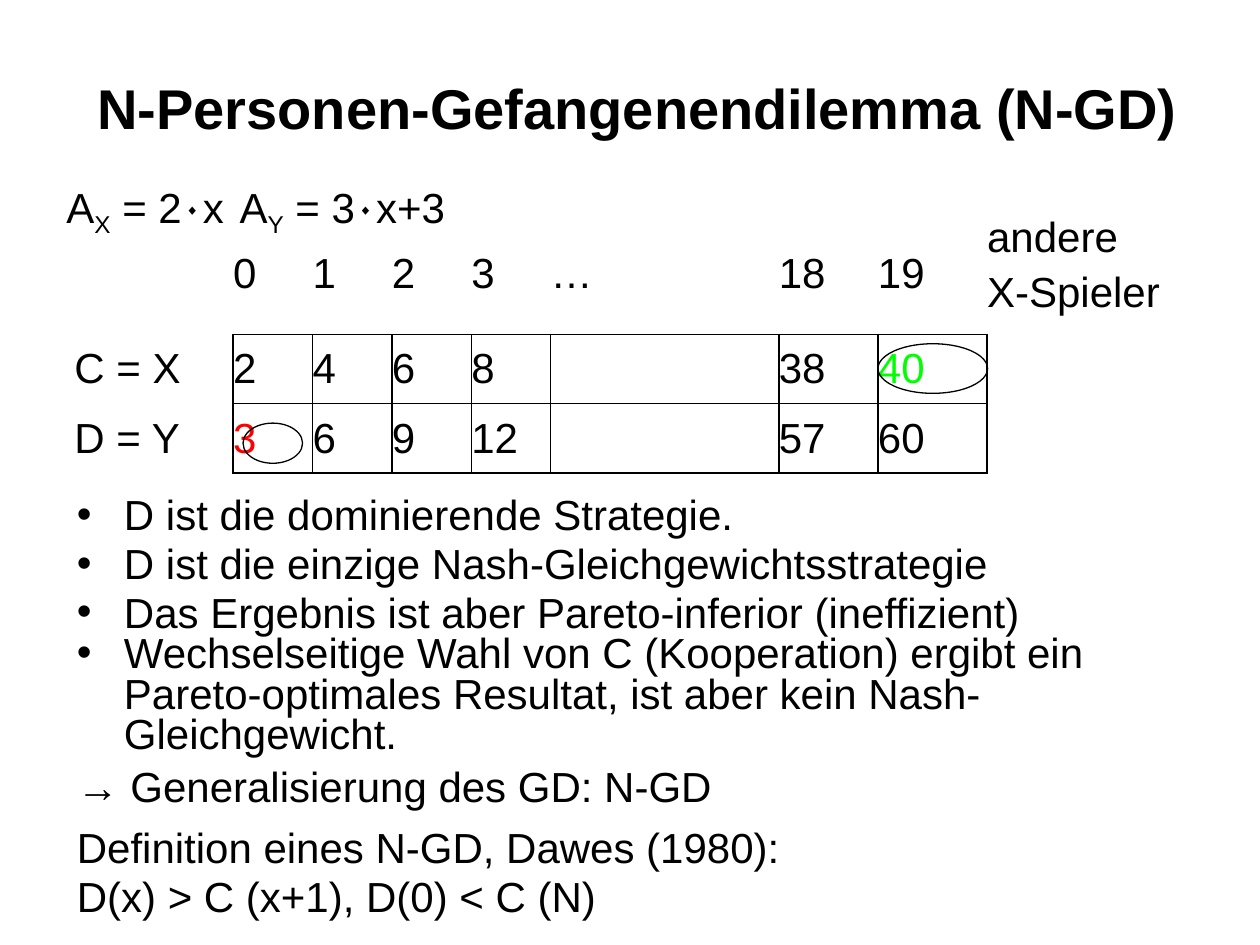
from lxml.etree import SubElement
from pptx import Presentation
from pptx.dml.color import RGBColor
from pptx.enum.shapes import MSO_SHAPE
from pptx.enum.text import MSO_ANCHOR, PP_ALIGN
from pptx.oxml.ns import qn
from pptx.util import Cm, Pt

COLORS = {"ink": "000000", "best": "00FF00", "equilibrium": "FF0000"}
FONT = "Arial"
SIZE = 24
INDENT = 0.95
BEFORE, AFTER = 4.8, 7.2  # 20 % and 30 % of the text size


class SlideBuilder:
    def __init__(self, deck):
        self.page = deck.slides.add_slide(deck.slide_layouts[5])

    def span(self, para, text, color="ink", size=SIZE, bold=False, baseline=None):
        span = para.add_run()
        span.text = text
        span.font.name = FONT
        span.font.size = Pt(size)
        span.font.bold = bold
        span.font.color.rgb = RGBColor.from_string(COLORS[color])
        if baseline:
            span.font._element.set("baseline", str(baseline * 1000))

    def hang(self, para, bullet=None):
        props = para._p.get_or_add_pPr()
        props.set("marL", str(Cm(INDENT)))
        props.set("indent", str(-Cm(INDENT)))
        if bullet:
            SubElement(props, qn("a:buFont"), typeface=FONT)
            SubElement(props, qn("a:buChar"), char=bullet)
        else:
            SubElement(props, qn("a:buNone"))

    def title(self, text, left, top, width, height):
        title = self.page.shapes.title
        title.left, title.top, title.width, title.height = map(
            Cm, (left, top, width, height))
        frame = title.text_frame
        frame.vertical_anchor = MSO_ANCHOR.MIDDLE
        para = frame.paragraphs[0]
        para.alignment = PP_ALIGN.CENTER
        self.span(para, text, size=32, bold=True)
        self.span(para, " ", size=48)

    def text_box(self, left, top, width, height):
        box = self.page.shapes.add_textbox(*map(Cm, (left, top, width, height)))
        box.text_frame.word_wrap = True
        return box.text_frame

    def formulas(self, parts, *place):
        para = self.text_box(*place).paragraphs[0]
        para.space_before = Pt(BEFORE)
        self.hang(para)
        for text, baseline in parts:
            self.span(para, text, baseline=baseline)

    def statements(self, items, *place):
        frame = self.text_box(*place)
        for index, (text, bullet, before, after) in enumerate(items):
            para = frame.add_paragraph() if index else frame.paragraphs[0]
            para.line_spacing = 0.8
            para.space_before, para.space_after = Pt(before), Pt(after)
            self.hang(para, bullet)
            self.span(para, text)

    def borders(self, cell, sides):
        props = cell._tc.get_or_add_tcPr()
        for side in "LRTB":
            line = SubElement(props, qn(f"a:ln{side}"), w=str(Pt(1)))
            if side in sides:
                fill = SubElement(line, qn("a:solidFill"))
                SubElement(fill, qn("a:srgbClr"), val=COLORS["ink"])
            else:
                SubElement(line, qn("a:noFill"))
        cell.fill.background()

    def payoff_table(self, rows, widths, heights, accents, left, top):
        frame = self.page.shapes.add_table(
            len(rows), len(widths), Cm(left), Cm(top),
            Cm(sum(widths)), Cm(sum(heights)))
        table = frame.table
        table.first_row = table.horz_banding = False
        for column, width in zip(table.columns, widths):
            column.width = Cm(width)
        for row, height in zip(table.rows, heights):
            row.height = Cm(height)
        last = len(widths) - 1
        for r, row in enumerate(rows):
            for c, text in enumerate(row):
                cell = table.cell(r, c)
                cell.margin_left = cell.margin_right = 0
                cell.margin_top = cell.margin_bottom = 0
                # Only the payoffs are framed; outer cells share their edges
                if 0 < c < last:
                    self.borders(cell, "LRTB" if r else "B")
                else:
                    self.borders(cell, "" if r == 0 else "L" if c else "R")
                if not (r == 0 and c == last):
                    cell.vertical_anchor = MSO_ANCHOR.MIDDLE
                for index, line in enumerate(text.split("\n") if text else []):
                    body = cell.text_frame
                    para = body.add_paragraph() if index else body.paragraphs[0]
                    para.space_before = Pt(BEFORE)
                    self.span(para, line, accents.get((r, c), "ink"))

    def ring(self, left, top, width, height):
        ring = self.page.shapes.add_shape(
            MSO_SHAPE.OVAL, *map(Cm, (left, top, width, height)))
        ring.shadow.inherit = False
        ring.fill.background()
        ring.line.color.rgb = RGBColor.from_string(COLORS["ink"])
        ring.line.width = Pt(0.75)


def main():
    deck = Presentation()
    deck.slide_width, deck.slide_height = Cm(25.4), Cm(19.05)
    slide = SlideBuilder(deck)

    # Title and payoff formulas
    slide.title(" N-Personen-Gefangenendilemma (N-GD)", 1.27, 0.76, 22.86, 2.36)
    slide.formulas(
        [("A", None), ("X", -25), (" = 2۰x\tA", None), ("Y", -25),
         (" = 3۰x+3", None)],
        1.09, 3.53, 11.23, 1.47)

    # Payoffs by number of other X players
    slide.payoff_table(
        [["", "0", "1", "2", "3", "…", "18", "19", "andere\nX-Spieler"],
         ["C = X", "2", "4", "6", "8", "", "38", "40", ""],
         ["D = Y", "3", "6", "9", "12", "", "57", "60", ""]],
        [3.2] + [1.6] * 4 + [4.6, 2, 2.2, 4.4], [2.42, 1.4, 1.4],
        {(1, 7): "best", (2, 1): "equilibrium"}, 1.5, 4.32)
    slide.ring(4.9, 8.53, 1.2, 0.81)
    slide.ring(17.7, 6.93, 2.21, 1)

    # Conclusions and definition
    slide.statements(
        [("D ist die dominierende Strategie.", "•", BEFORE, 0),
         ("D ist die einzige Nash-Gleichgewichtsstrategie", "•", BEFORE, 0),
         ("Das Ergebnis ist aber Pareto-inferior (ineffizient)", "•", BEFORE, 0),
         ("Wechselseitige Wahl von C (Kooperation) ergibt ein Pareto-optimales "
          "Resultat, ist aber kein Nash-Gleichgewicht.", "•", 0, AFTER),
         ("→ Generalisierung des GD: N-GD", None, 0, AFTER),
         ("Definition eines N-GD, Dawes (1980):", None, BEFORE, 0),
         ("D(x) > C (x+1), D(0) < C (N)", None, BEFORE, 0)],
        1.3, 9.93, 22.86, 8.56)

    deck.save("out.pptx")


if __name__ == "__main__":
    main()
